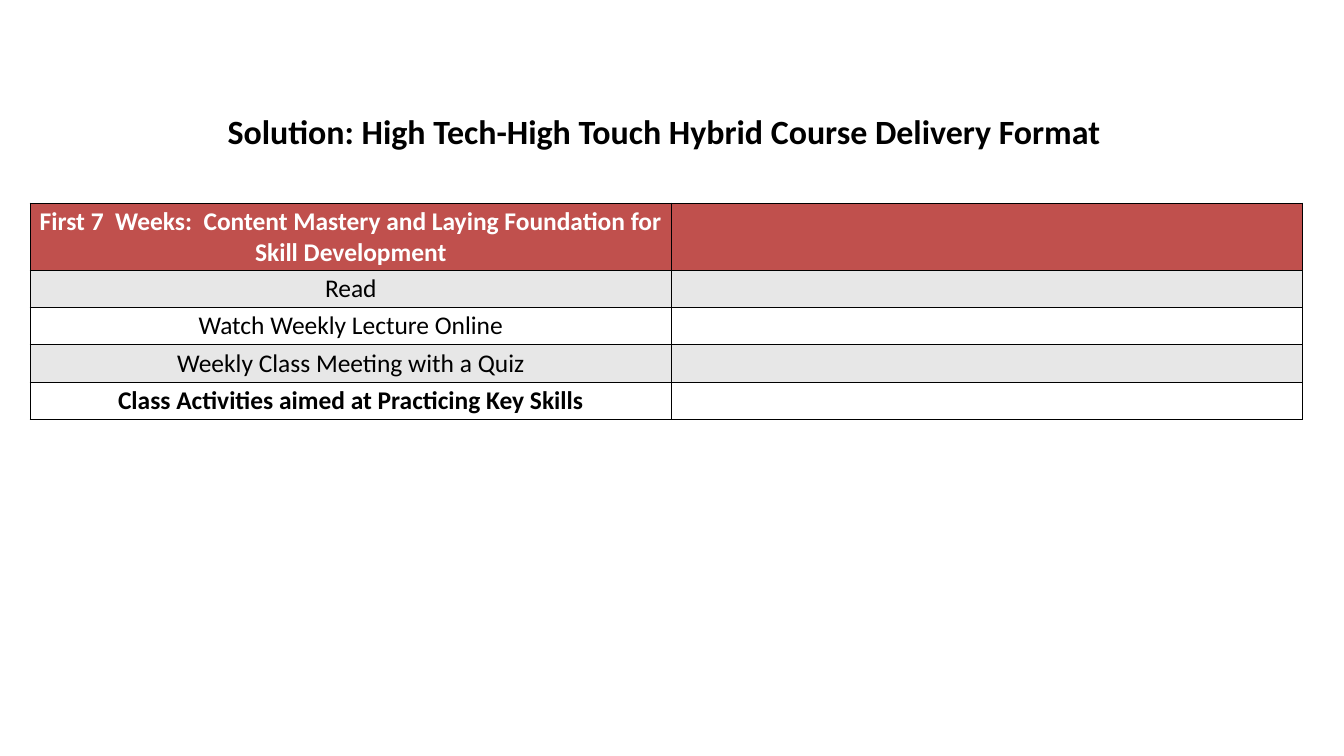
from lxml import etree
from pptx import Presentation
from pptx.dml.color import RGBColor
from pptx.enum.text import MSO_ANCHOR, PP_ALIGN
from pptx.oxml.ns import qn
from pptx.util import Pt

PX = 9144
CENTER = PP_ALIGN.CENTER
MIDDLE = MSO_ANCHOR.MIDDLE
FONT = "Calibri"
COLORS = {"black": "000000", "white": "FFFFFF", "header": "C0504D", "band": "E7E7E7"}

TITLE = "Solution: High Tech-High Touch Hybrid Course Delivery Format"
ROWS = [
    ("First 7  Weeks:  Content Mastery and Laying Foundation for Skill Development",
     "header", "white", True),
    ("Read", "band", "black", False),
    ("Watch Weekly Lecture Online", "white", "black", False),
    ("Weekly Class Meeting with a Quiz", "band", "black", False),
    ("Class Activities aimed at Practicing Key Skills", "white", "black", True),
]


def rgb(name):
    """Return the named colour."""
    return RGBColor.from_string(COLORS[name])


def write(tf, text, size, color, bold):
    """Write one centred run into a text frame."""
    p = tf.paragraphs[0]
    p.alignment = CENTER
    r = p.add_run()
    r.text = text
    r.font.name = FONT
    r.font.size = Pt(size)
    r.font.bold = bold
    r.font.color.rgb = rgb(color)


def add_borders(cell):
    """Draw a thin black line on every side of a cell."""
    tc_pr = cell._tc.get_or_add_tcPr()
    for i, side in enumerate(("a:lnL", "a:lnR", "a:lnT", "a:lnB")):
        ln = etree.Element(qn(side), w=str(Pt(1)))
        fill = etree.SubElement(ln, qn("a:solidFill"))
        etree.SubElement(fill, qn("a:srgbClr"), val=COLORS["black"])
        tc_pr.insert(i, ln)


def add_title(s, x, y, w, h):
    """Add the slide heading in the given box."""
    tf = s.shapes.add_textbox(x * PX, y * PX, w * PX, h * PX).text_frame
    tf.word_wrap = True
    tf.vertical_anchor = MIDDLE
    write(tf, TITLE, 40, "black", True)


def add_schedule(s, x, y, w, h):
    """Add the course table, with a taller header row, in the given box."""
    first_col, row_h = 1050, 61
    header_h = h - row_h * (len(ROWS) - 1)
    table = s.shapes.add_table(len(ROWS), 2, x * PX, y * PX, w * PX, h * PX).table
    table.columns[0].width = first_col * PX
    table.columns[1].width = (w - first_col) * PX
    for i, (text, fill, color, bold) in enumerate(ROWS):
        table.rows[i].height = (row_h if i else header_h) * PX
        for cell in table.rows[i].cells:
            cell.fill.solid()
            cell.fill.fore_color.rgb = rgb(fill)
            add_borders(cell)
        write(table.cell(i, 0).text_frame, text, 30, color, bold)


def main():
    """Build and save the slide."""
    prs = Presentation()
    prs.slide_width = 2199 * PX
    prs.slide_height = 1237 * PX
    s = prs.slides.add_slide(prs.slide_layouts[6])
    add_title(s, 0, 168, 2173, 92)
    add_schedule(s, 49, 332, 2082, 348)
    prs.save("out.pptx")


if __name__ == "__main__":
    main()
